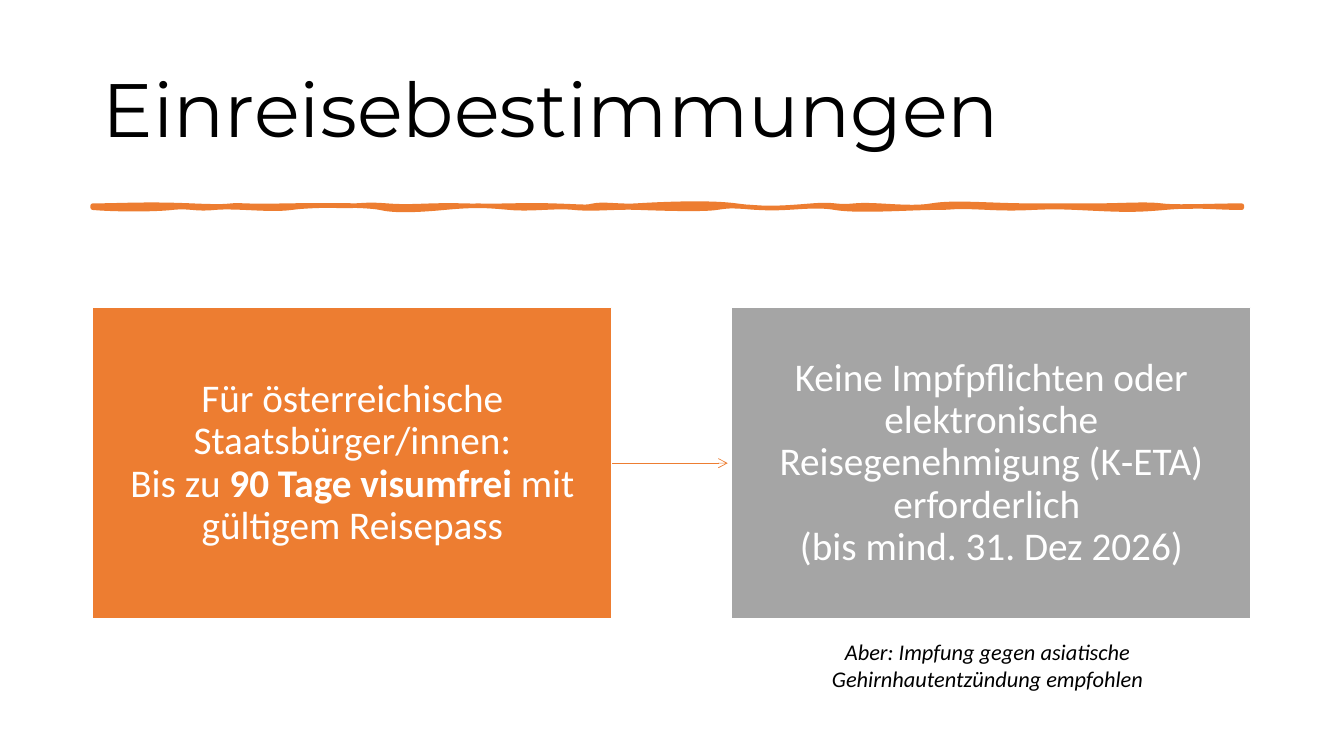
import pptx
import pptx.dml.color
import pptx.enum.shapes
import pptx.enum.text
import pptx.oxml.ns
import pptx.util
import lxml.etree

RGB = pptx.dml.color.RGBColor
ORANGE = RGB(0xED, 0x7D, 0x31)
GRAY = RGB(0xA5, 0xA5, 0xA5)
WHITE = RGB(0xFF, 0xFF, 0xFF)
BLACK = RGB(0, 0, 0)

ALIGN = pptx.enum.text.PP_ALIGN
ANCHOR = pptx.enum.text.MSO_ANCHOR
qn = pptx.oxml.ns.qn

LEFT = 6.9
BOX_WIDTH, BOX_HEIGHT, BOX_TOP = 38.62, 41.2, 40.67
RIGHT_BOX = 54.45
RULE_WIDTH = 85.5
RIPPLE = 0.27

# Brush edges: first control (x, ripples), second control (x, ripples), end x;
# x runs from 0 to 100 along the rule.
TOP_EDGE = [
    (2.4, 0, 4.6, -1, 8.6), (12.7, 1, 11.2, -0.5, 13.3),
    (15.4, 0.5, 18.5, -0.5, 21), (23.5, 0.5, 23.4, -1, 25.6),
    (27.9, 1, 29, -0.5, 32.3), (35.6, 0.5, 37, -0.5, 40),
    (42.9, 0.5, 42.9, 1, 43.6), (44.4, -1, 45.9, 0.5, 47.3),
    (48.7, -0.5, 53.4, -2, 56), (58.5, 2, 60.4, 1, 62.6),
    (64.8, -1, 64.5, 1, 66.3), (68.1, -1, 71, 2, 73),
    (75, -2, 78.1, 0, 81.7), (85.2, 0, 85.2, 0, 87.3),
    (89.5, 0, 91.6, -1, 93), (94.4, 1, 97.5, 0, 100),
]
BOTTOM_EDGE = [
    (97.6, 0, 96.2, -1.5, 93.3), (90.4, 1.5, 89.3, 1, 85.6),
    (82, -1, 81.7, 1, 78), (74.3, -1, 75.4, 0, 73.3),
    (71.2, 0, 66.6, 2, 64.6), (62.6, -2, 60.5, 1, 58),
    (55.4, -1, 55.5, -1, 54.3), (53.2, 1, 49.9, 0.5, 47.6),
    (45.4, -0.5, 43.7, 1, 41.9), (40.3, -1, 38.2, 1, 36.3),
    (34.3, -1, 33.4, -1.5, 30.6), (27.8, 1.5, 26.1, 1.5, 25),
    (23.8, -1.5, 19.1, -1.5, 17.3), (15.4, 1.5, 12.5, -1, 10.6),
    (8.8, 1, 8.5, -1, 6.9), (5.4, 1, 1.9, 1, 0),
]


def edge_curves(level, edge):
    """Give each curve of an edge as two controls and an end, all (x, ripples)."""
    return [((first_x, level + first_y), (second_x, level + second_y), (end, level))
            for first_x, first_y, second_x, second_y, end in edge]


def write(frame, *spans, font="Calibri", size=28, color=WHITE, italic=False,
          align=ALIGN.CENTER, anchor=ANCHOR.MIDDLE, spacing=0.9, insets=(0.1, 0.05)):
    """Fill a frame with one paragraph; a span is a text or (text, bold)."""
    frame.word_wrap = True
    frame.auto_size = pptx.enum.text.MSO_AUTO_SIZE.NONE
    frame.vertical_anchor = anchor
    frame.margin_left = frame.margin_right = pptx.util.Inches(insets[0])
    frame.margin_top = frame.margin_bottom = pptx.util.Inches(insets[1])
    para = frame.paragraphs[0]
    para.alignment = align
    para.line_spacing = spacing
    for span in spans:
        text, bold = span if isinstance(span, tuple) else (span, False)
        for index, line in enumerate(text.split("\n")):
            if index:
                para.add_line_break()
            run = para.add_run()
            run.text = line
            run.font.name = font
            run.font.size = pptx.util.Pt(size)
            run.font.color.rgb = color
            run.font.bold = bold
            run.font.italic = italic


class SlideBuilder:
    """Places elements by percent of the slide's width and height."""

    def __init__(self, deck):
        self.deck = deck
        self.page = deck.slides.add_slide(deck.slide_layouts.get_by_name("Title Only"))

    def across(self, share):
        return round(self.deck.slide_width * share / 100)

    def down(self, share):
        return round(self.deck.slide_height * share / 100)

    def frame(self, left, top, width, height):
        return self.across(left), self.down(top), self.across(width), self.down(height)

    def title(self, text, *place):
        title = self.page.shapes.title
        title.left, title.top, title.width, title.height = self.frame(*place)
        write(title.text_frame, text, font="Montserrat", size=54, color=BLACK,
              align=ALIGN.LEFT)

    def brush_rule(self, left, top, width):
        """Draw the outline through its curve ends, then bend each side."""
        def local(point):
            return self.across(width * point[0] / 100), self.down(RIPPLE * point[1])

        curves = edge_curves(0, TOP_EDGE)
        curves.append(((100, 0), (100, 1), (100, 1)))
        curves += edge_curves(1, BOTTOM_EDGE)
        builder = self.page.shapes.build_freeform(0, 0)
        builder.add_line_segments([local(curve[-1]) for curve in curves], close=True)
        rule = builder.convert_to_shape(self.across(left), self.down(top))
        for side, curve in zip(list(rule.element.iter(qn("a:lnTo"))), curves):
            bend = lxml.etree.Element(qn("a:cubicBezTo"))
            for point in curve:
                x, y = local(point)
                lxml.etree.SubElement(bend, qn("a:pt"), x=str(x), y=str(y))
            side.getparent().replace(side, bend)
        self.paint(rule, ORANGE, ORANGE, 3.25)

    def paint(self, shape, fill, line, line_width):
        shape.shadow.inherit = False
        shape.fill.solid()
        shape.fill.fore_color.rgb = fill
        shape.line.color.rgb = line
        shape.line.width = pptx.util.Pt(line_width)

    def arrow(self, start, end, top):
        arrow = self.page.shapes.add_connector(
            pptx.enum.shapes.MSO_CONNECTOR.STRAIGHT,
            self.across(start), self.down(top), self.across(end), self.down(top))
        arrow.line.color.rgb = ORANGE
        arrow.line.width = pptx.util.Pt(0.5)
        properties = arrow.element.find(qn("p:spPr"))
        lxml.etree.SubElement(properties.find(qn("a:ln")), qn("a:tailEnd"), type="arrow")
        lxml.etree.SubElement(properties, qn("a:effectLst"))

    def box(self, left, fill, *spans):
        box = self.page.shapes.add_shape(
            pptx.enum.shapes.MSO_SHAPE.RECTANGLE,
            *self.frame(left, BOX_TOP, BOX_WIDTH, BOX_HEIGHT))
        self.paint(box, fill, WHITE, 1)
        write(box.text_frame, *spans, insets=(0.25, 0.27))

    def caption(self, text, *place):
        caption = self.page.shapes.add_textbox(*self.frame(*place))
        write(caption.text_frame, text, size=16, color=BLACK, italic=True,
              anchor=ANCHOR.TOP, spacing=1.0)


def main():
    deck = pptx.Presentation()
    deck.slide_width = pptx.util.Inches(40 / 3)
    deck.slide_height = pptx.util.Inches(7.5)
    slide = SlideBuilder(deck)
    slide.title("Einreisebestimmungen", LEFT, 5.33, 86.25, 19.33)
    slide.brush_rule(LEFT, 27.2, RULE_WIDTH)
    slide.arrow(LEFT + BOX_WIDTH, RIGHT_BOX - 0.3, BOX_TOP + BOX_HEIGHT / 2)
    slide.box(LEFT, ORANGE, "Für österreichische Staatsbürger/innen:\nBis zu ",
              ("90 Tage visumfrei", True), " mit gültigem Reisepass")
    slide.box(RIGHT_BOX, GRAY,
              "Keine Impfpflichten oder elektronische Reisegenehmigung (K‑ETA) "
              "erforderlich \n(bis mind. 31. Dez 2026)")
    slide.caption("Aber: Impfung gegen asiatische Gehirnhautentzündung empfohlen",
                  54.35, 83.73, 38.25, 8.53)
    deck.save("out.pptx")


if __name__ == "__main__":
    main()
